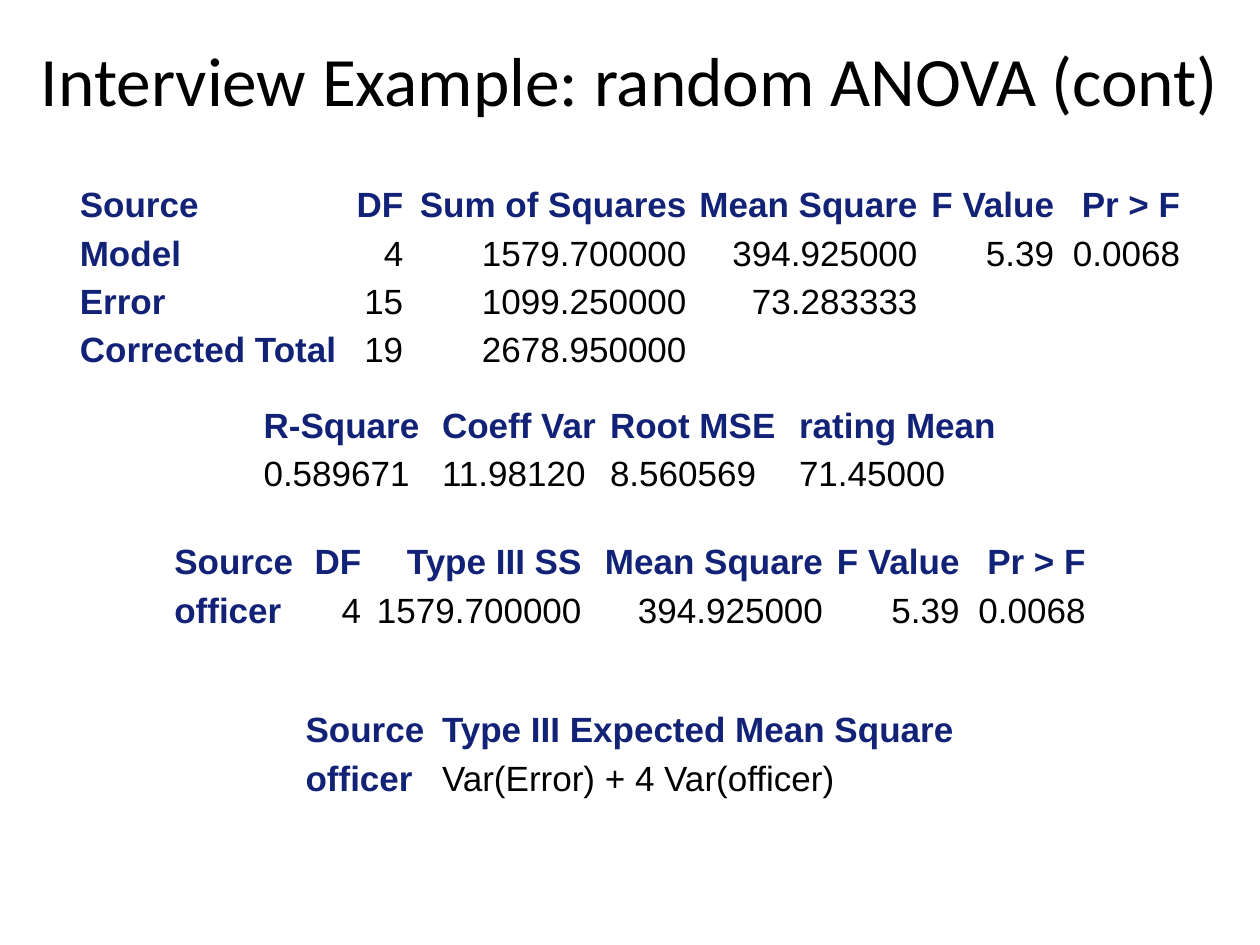
import pptx
import pptx.dml.color
import pptx.enum.text
import pptx.util

ALIGN = pptx.enum.text.PP_ALIGN
MIDDLE = pptx.enum.text.MSO_ANCHOR.MIDDLE
UNIT = pptx.util.Inches(1) // 12
PAGE_COLUMNS, PAGE_ROWS = 120, 90
NAVY, BLACK = "112277", "000000"

ANOVA = [
    ["Source", "DF", "Sum of Squares", "Mean Square", "F Value", "Pr > F"],
    ["Model", "4", "1579.700000", "394.925000", "5.39", "0.0068"],
    ["Error", "15", "1099.250000", "73.283333", "", ""],
    ["Corrected Total", "19", "2678.950000", "", "", ""],
]
FIT = [
    ["R-Square", "Coeff Var", "Root MSE", "rating Mean"],
    ["0.589671", "11.98120", "8.560569", "71.45000"],
]
TYPE_THREE = [
    ["Source", "DF", "Type III SS", "Mean Square", "F Value", "Pr > F"],
    ["officer", "4", "1579.700000", "394.925000", "5.39", "0.0068"],
]
EXPECTED = [
    ["Source", "Type III Expected Mean Square"],
    ["officer", "Var(Error) + 4 Var(officer)"],
]


def set_font(para, name, size, color, bold=False):
    para.font.name = name
    para.font.size = pptx.util.Pt(size)
    para.font.bold = bold
    para.font.color.rgb = pptx.dml.color.RGBColor.from_string(color)


def add_title(page, text, width, height):
    box = page.shapes.add_textbox(0, 0, width * UNIT, height * UNIT)
    frame = box.text_frame
    frame.word_wrap = True
    frame.vertical_anchor = MIDDLE
    para = frame.paragraphs[0]
    para.text = text
    para.alignment = ALIGN.CENTER
    set_font(para, "Calibri", 39.6, BLACK)


def fill_cell(cell, text, align, heading):
    cell.fill.background()
    cell.vertical_anchor = MIDDLE
    cell.margin_left = cell.margin_right = pptx.util.Inches(0.05)
    cell.margin_top = cell.margin_bottom = 0
    para = cell.text_frame.paragraphs[0]
    para.text = text
    para.alignment = align
    para.line_spacing = 1.15
    para.space_before = para.space_after = pptx.util.Pt(5)
    set_font(para, "Arial", 20, NAVY if heading else BLACK, heading)


def add_centred_table(page, top, widths, rows, aligns, row_headings=True):
    width = sum(widths)
    left = (PAGE_COLUMNS - width) * UNIT // 2
    frame = page.shapes.add_table(
        len(rows), len(widths), left, top * UNIT, width * UNIT, 0)
    table = frame.table
    table.first_row = table.horz_banding = False
    for column, share in zip(table.columns, widths):
        column.width = share * UNIT
    for r, row in enumerate(rows):
        for c, text in enumerate(row):
            heading = r == 0 or (row_headings and c == 0)
            fill_cell(table.cell(r, c), text, aligns[c], heading)


def main():
    deck = pptx.Presentation()
    deck.slide_width = PAGE_COLUMNS * UNIT
    deck.slide_height = PAGE_ROWS * UNIT
    page = deck.slides.add_slide(deck.slide_layouts[6])
    numbers = [ALIGN.LEFT] + [ALIGN.RIGHT] * 5

    add_title(page, "Interview Example: random ANOVA (cont)", PAGE_COLUMNS, 15)
    add_centred_table(page, 17, [26, 6, 27, 22, 13, 12], ANOVA, numbers)
    add_centred_table(page, 38, [17, 16, 18, 20], FIT, [ALIGN.JUSTIFY] * 4, False)
    add_centred_table(page, 51, [13, 6, 21, 23, 13, 12], TYPE_THREE, numbers)
    add_centred_table(page, 67, [13, 50], EXPECTED, [ALIGN.LEFT] * 2)
    deck.save("out.pptx")


if __name__ == "__main__":
    main()
